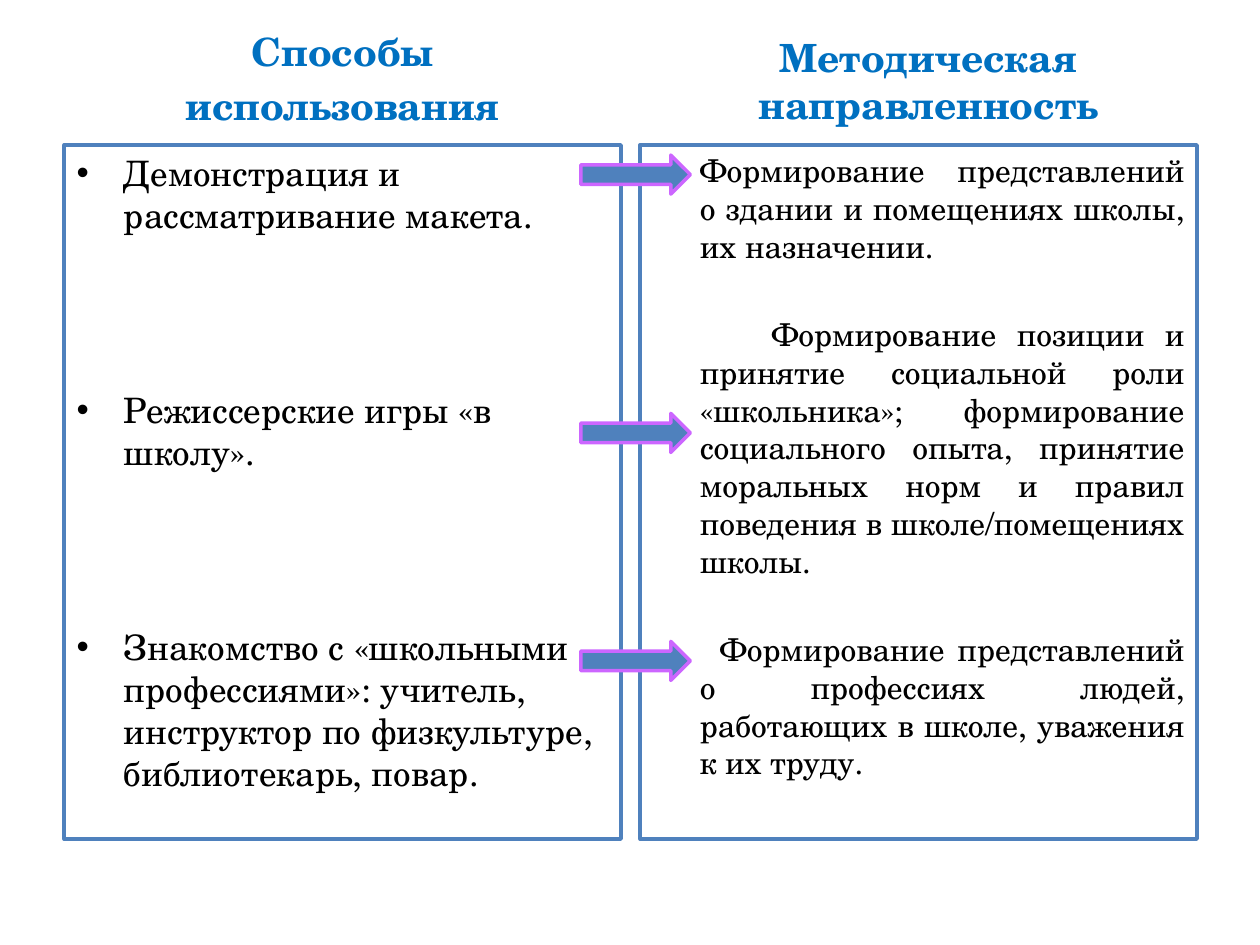
from lxml import etree
from pptx import Presentation
from pptx import util as u
from pptx.dml.color import RGBColor
from pptx.enum import shapes, text
from pptx.oxml.ns import qn

HUES = {"head": "0070C0", "ink": "000000", "page": "FFFFFF",
        "blue": "4F81BD", "pink": "CC66FF"}
FACE = "TeX Gyre Schola"
WIDE = 318.2
HANG = 27
FRAME = {"word_wrap": True, "margin_left": u.Pt(7.2), "margin_right": u.Pt(7.2),
         "margin_top": u.Pt(3.6), "margin_bottom": u.Pt(3.6)}
HEADS = [
    (36.7, 15.1, 61.9, ["Способы", "использования"]),
    (371.5, 25.9, 50.4, ["Методическая направленность"]),
]
WAYS = [
    ("Демонстрация и рассматривание макета.", -HANG, True),
    ("Режиссерские игры «в школу».", -HANG, True),
    ("Знакомство с «школьными профессиями»: учитель, инструктор по физкультуре, "
     "библиотекарь, повар.", -HANG, True),
]
AIMS = [
    ("Формирование представлений о здании и помещениях школы, их назначении.",
     -HANG, True),
    ("Формирование позиции и принятие социальной роли «школьника»; формирование "
     "социального опыта, принятие моральных норм и правил поведения в "
     "школе/помещениях школы.", 41, False),
    ("Формирование представлений о профессиях людей, работающих в школе, "
     "уважения к их труду.", 11.5, False),
]
ARROWS = [88.6, 236.2, 366.5]


def put(item, vals):
    for name, val in vals.items():
        setattr(item, name, val)


def tint(name):
    return RGBColor.from_string(HUES[name])


def shape(slide, kind, box, fill, line):
    item = slide.shapes.add_shape(kind, *map(u.Pt, box))
    item.shadow.inherit = False
    item.fill.solid()
    item.fill.fore_color.rgb = tint(fill)
    item.line.color.rgb = tint(line)
    item.line.width = u.Pt(2)
    return item


def write(para, words, size, hue, bold=False):
    run = para.add_run()
    run.text = words
    put(run.font, {"name": FACE, "size": u.Pt(size), "bold": bold})
    run.font.color.rgb = tint(hue)


def paras(frame, rows, align, gap):
    for num, row in enumerate(rows):
        para = frame.add_paragraph() if num else frame.paragraphs[0]
        put(para, {"alignment": align, "space_before": u.Pt(gap if num else 0)})
        yield para, row


def head(slide, left, top, high, lines):
    frame = slide.shapes.add_textbox(*map(u.Pt, (left, top, WIDE, high))).text_frame
    put(frame, {**FRAME, "vertical_anchor": text.MSO_ANCHOR.BOTTOM})
    for para, line in paras(frame, lines, text.PP_ALIGN.CENTER, 4.4):
        write(para, line, 22.2, "head", True)


def indent(para, first, dot):
    props = para._p.get_or_add_pPr()
    props.set("marL", str(u.Pt(HANG)))
    props.set("indent", str(u.Pt(first)))
    if dot:
        font = etree.SubElement(props, qn("a:buFont"))
        font.set("typeface", "Arial")
        etree.SubElement(props, qn("a:buChar")).set("char", "•")


def panel(slide, left, rows, size, align, gap):
    box = (left, 82.8, WIDE, 396.7)
    frame = shape(slide, shapes.MSO_SHAPE.RECTANGLE, box, "page", "blue").text_frame
    put(frame, {**FRAME, "vertical_anchor": text.MSO_ANCHOR.TOP})
    for para, (words, first, dot) in paras(frame, rows, align, gap):
        indent(para, first, dot)
        write(para, words, size, "ink")


def main():
    deck = Presentation()
    put(deck, {"slide_width": u.Pt(720), "slide_height": u.Pt(540)})
    slide = deck.slides.add_slide(deck.slide_layouts[6])
    for spot in HEADS:
        head(slide, *spot)
    panel(slide, 36.7, WAYS, 20, text.PP_ALIGN.LEFT, 87.5)
    panel(slide, 365.8, AIMS, 18, text.PP_ALIGN.JUSTIFY, 28.8)
    for top in ARROWS:
        box = (331.9, top, 62.6, 22.3)
        shape(slide, shapes.MSO_SHAPE.RIGHT_ARROW, box, "blue", "pink")
    deck.save("out.pptx")


if __name__ == "__main__":
    main()
